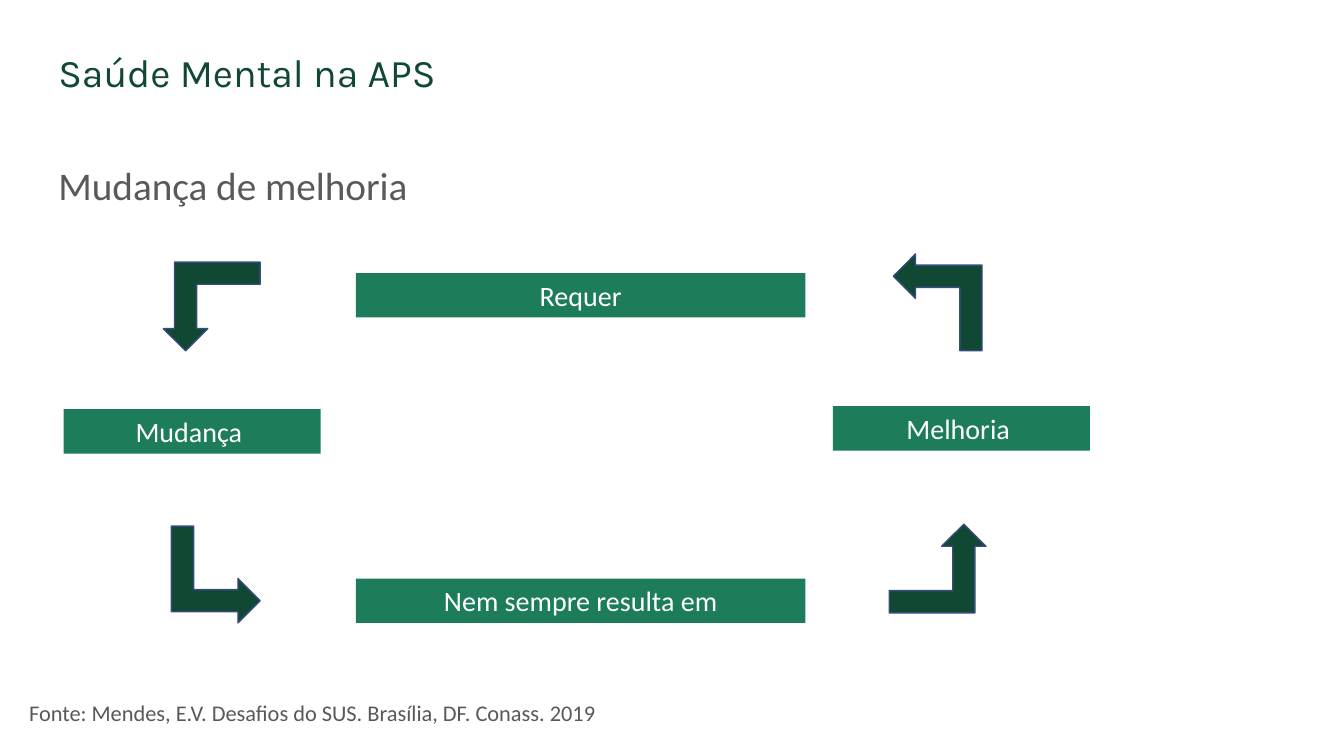
from dataclasses import dataclass

from pptx import Presentation
from pptx import util as u
from pptx.dml.color import RGBColor
from pptx.enum import shapes, text


@dataclass(frozen=True)
class Theme:
    heading_font: str = "Karla"
    body_font: str = "Calibri"
    dark_green: str = "114834"
    green: str = "1D7D5B"
    gray: str = "595959"
    white: str = "FFFFFF"
    outline: str = "374B7F"
    title_size: int = 28
    label_size: int = 20
    source_size: int = 16


class SlideBuilder:
    def __init__(self, prs, theme):
        self.theme = theme
        self.s = prs.slides.add_slide(prs.slide_layouts[5])

    def set_text(self, sp, words, font, size, color, align=text.PP_ALIGN.LEFT,
                 spacing=1.0, **frame):
        tf = sp.text_frame
        frame_format = {"word_wrap": True, "auto_size": text.MSO_AUTO_SIZE.NONE,
                        "vertical_anchor": text.MSO_ANCHOR.TOP, **frame}
        for name, value in frame_format.items():
            setattr(tf, name, value)
        p = tf.paragraphs[0]
        for name, value in {"alignment": align, "line_spacing": spacing}.items():
            setattr(p, name, value)
        r = p.add_run()
        r.text = words
        for name, value in {"name": font, "size": u.Pt(size)}.items():
            setattr(r.font, name, value)
        r.font.color.rgb = RGBColor.from_string(color)

    def title(self, words, *box):
        sp = self.s.shapes.title
        for name, value in zip(("left", "top", "width", "height"), box):
            setattr(sp, name, u.Inches(value))
        t = self.theme
        self.set_text(sp, words, t.body_font, t.title_size, t.gray, spacing=0.9,
                      vertical_anchor=text.MSO_ANCHOR.MIDDLE)

    def textbox(self, words, box, font, size, color, **options):
        sp = self.s.shapes.add_textbox(*map(u.Inches, box))
        self.set_text(sp, words, font, size, color, **options)

    def shape(self, kind, box, fill):
        sp = self.s.shapes.add_shape(kind, *map(u.Inches, box))
        sp.shadow.inherit = False
        sp.fill.solid()
        sp.fill.fore_color.rgb = RGBColor.from_string(fill)
        return sp

    def label(self, words, left, top, width):
        t = self.theme
        sp = self.shape(shapes.MSO_SHAPE.RECTANGLE, (left, top, width, 0.44), t.green)
        sp.line.fill.background()
        self.set_text(sp, words, t.body_font, t.label_size, t.white,
                      align=text.PP_ALIGN.CENTER)

    def arrow(self, left, top, rotation):
        t = self.theme
        sp = self.shape(shapes.MSO_SHAPE.BENT_UP_ARROW, (left, top, 0.96, 0.88),
                        t.dark_green)
        sp.rotation = rotation
        sp.line.color.rgb = RGBColor.from_string(t.outline)
        sp.line.width = u.Pt(1)


def main():
    prs = Presentation()
    prs.slide_width, prs.slide_height = u.Inches(13.33), u.Inches(7.5)
    theme = Theme()
    slide = SlideBuilder(prs, theme)

    # Headings
    slide.textbox("Saúde Mental na APS", (0.48, 0.43, 7.08, 0.57),
                  theme.heading_font, theme.title_size, theme.dark_green)
    slide.title("Mudança de melhoria", 0.48, 1.21, 11.5, 1.31)

    # Cycle labels
    wide, narrow = 4.46, 2.55
    for words, left, top, width in (
        ("Requer", 3.53, 2.71, wide),
        ("Nem sempre resulta em", 3.53, 5.74, wide),
        ("Mudança ", 0.63, 4.06, narrow),
        ("Melhoria ", 8.26, 4.03, narrow),
    ):
        slide.label(words, left, top, width)

    # Cycle arrows
    for left, top, rotation in ((8.82, 5.2, 0), (1.62, 2.6, 180),
                                (8.82, 2.56, 270), (1.66, 5.26, 90)):
        slide.arrow(left, top, rotation)

    # Source line
    slide.textbox("Fonte: Mendes, E.V. Desafios do SUS. Brasília, DF. Conass. 2019",
                  (0.19, 6.92, 5.94, 0.34), theme.body_font, theme.source_size,
                  theme.gray, spacing=0.9, word_wrap=False)

    prs.save("out.pptx")


if __name__ == "__main__":
    main()
